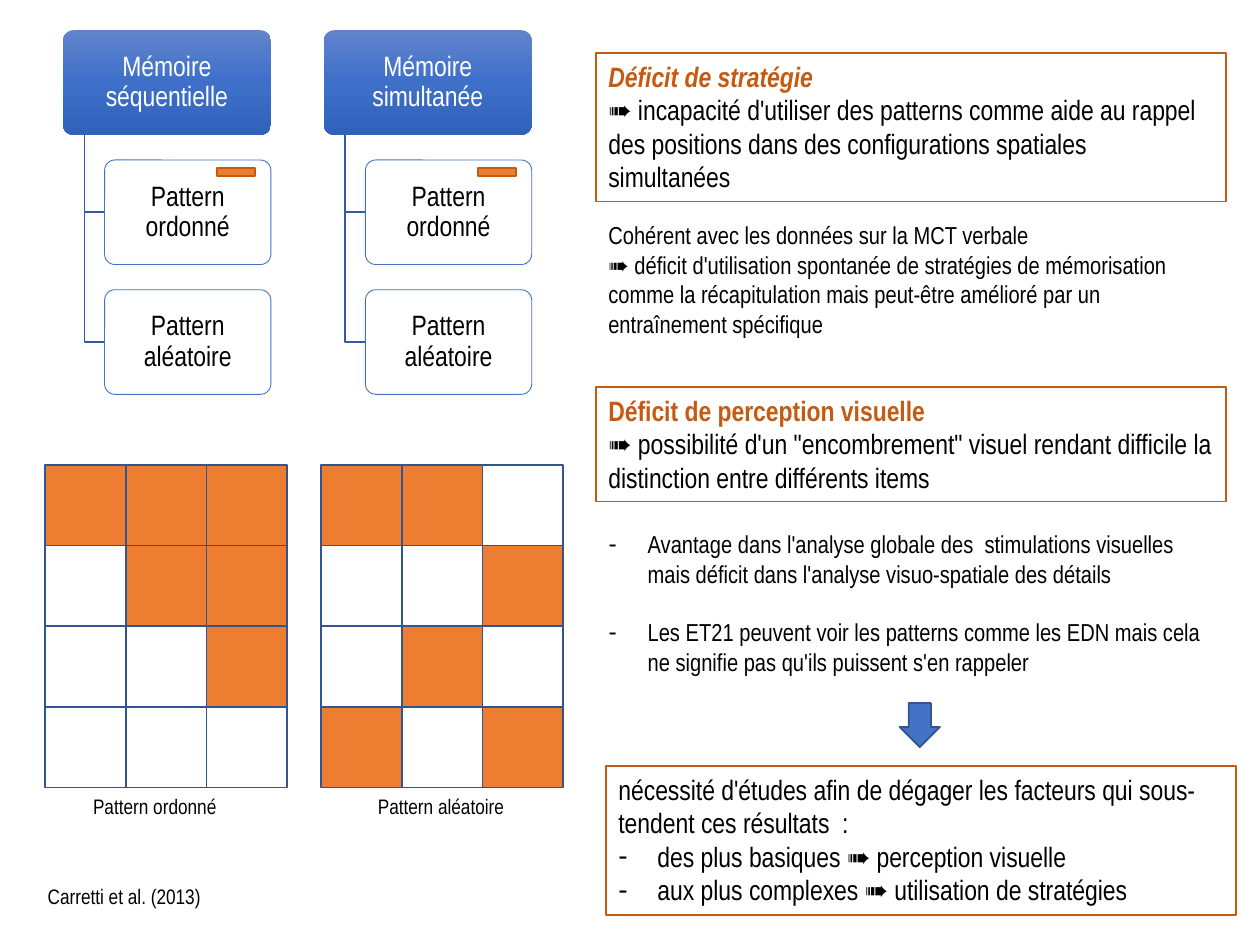
"""Builds the slide on sequential and simultaneous memory patterns."""
import copy

import lxml.etree
import pptx
import pptx.dml.color
import pptx.enum.shapes
import pptx.enum.text
import pptx.oxml.ns
import pptx.util

Inches = pptx.util.Inches
Pt = pptx.util.Pt
RGBColor = pptx.dml.color.RGBColor
SHAPE = pptx.enum.shapes.MSO_SHAPE
ALIGN = pptx.enum.text.PP_ALIGN
ANCHOR = pptx.enum.text.MSO_ANCHOR
AUTO_SIZE = pptx.enum.text.MSO_AUTO_SIZE
qn = pptx.oxml.ns.qn

FONT = "Arial Narrow"
BLACK = RGBColor(0x00, 0x00, 0x00)
WHITE = RGBColor(0xFF, 0xFF, 0xFF)
ORANGE = RGBColor(0xED, 0x7D, 0x31)
RUST = RGBColor(0xC5, 0x5A, 0x11)
BLUE = RGBColor(0x44, 0x72, 0xC4)
NAVY = RGBColor(0x32, 0x54, 0x91)
BRANCH_BLUE = RGBColor(0x36, 0x5B, 0x9D)
HEADER_GRADIENT = (
    (0, RGBColor(0x61, 0x83, 0xCB)),
    (0.5, RGBColor(0x3E, 0x70, 0xCA)),
    (1, RGBColor(0x30, 0x62, 0xBB)),
)

CELL = 0.64
NODE_HEIGHT = 0.83
NODE_STEP = 1.03
TREES = ((0.5, "Mémoire séquentielle"), (2.57, "Mémoire simultanée"))
GRIDS = (
    (0.36, ("XXX", ".XX", "..X", "...")),
    (2.55, ("XX.", "..X", ".X.", "X.X")),
)
CAPTIONS = (
    (0.64, 6.25, 1.2, "Pattern ordonné"),
    (2.9, 6.25, 1.22, "Pattern aléatoire"),
    (0.28, 6.96, 1.43, "Carretti et al. (2013)"),
)


def add_run(paragraph, text, size, color=BLACK, bold=False, italic=False):
    """Append one formatted run to a paragraph."""
    run = paragraph.add_run()
    run.text = text
    run.font.name = FONT
    run.font.size = Pt(size)
    run.font.bold = bold
    run.font.italic = italic
    run.font.color.rgb = color


def next_paragraph(frame):
    """Return the unused first paragraph of a frame or a new one."""
    first = frame.paragraphs[0]
    paragraph = frame.add_paragraph() if first.runs else first
    paragraph.alignment = ALIGN.LEFT
    paragraph.space_before = Pt(0)
    return paragraph


def add_text(frame, text, size, **style):
    """Add a left-aligned paragraph."""
    add_run(next_paragraph(frame), text, size, **style)


def add_bullet(frame, text, size, space_before=0):
    """Add a paragraph with a hanging dash."""
    paragraph = next_paragraph(frame)
    paragraph.space_before = Pt(space_before)
    add_run(paragraph, text, size)
    properties = paragraph._p.get_or_add_pPr()
    properties.set("marL", str(Inches(0.31)))
    properties.set("indent", str(Inches(-0.31)))
    lxml.etree.SubElement(properties, qn("a:buFont")).set("typeface", "Arial")
    lxml.etree.SubElement(properties, qn("a:buChar")).set("char", "-")


def add_block(slide, kind, left, top, width, height, fill=None, line=None, weight=1):
    """Add a preset shape with plain fill and outline."""
    shape = slide.shapes.add_shape(
        kind, Inches(left), Inches(top), Inches(width), Inches(height))
    shape.shadow.inherit = False
    if fill is None:
        shape.fill.background()
    else:
        shape.fill.solid()
        shape.fill.fore_color.rgb = fill
    if line is None:
        shape.line.fill.background()
    else:
        shape.line.color.rgb = line
        shape.line.width = Pt(weight)
    return shape


def add_frame(slide, left, top, width, height):
    """Add a rust-outlined box and return its text frame."""
    shape = add_block(slide, SHAPE.RECTANGLE, left, top, width, height, line=RUST)
    frame = shape.text_frame
    frame.word_wrap = True
    frame.vertical_anchor = ANCHOR.TOP
    return frame


def add_text_box(slide, left, top, width, height, wrap):
    """Add a text box and return its text frame."""
    box = slide.shapes.add_textbox(
        Inches(left), Inches(top), Inches(width), Inches(height))
    box.text_frame.word_wrap = wrap
    return box.text_frame


def add_node(slide, left, top, width, text, color, **style):
    """Add a rounded tree node with centred text."""
    shape = add_block(
        slide, SHAPE.ROUNDED_RECTANGLE, left, top, width, NODE_HEIGHT, **style)
    shape.adjustments[0] = 0.1
    frame = shape.text_frame
    frame.word_wrap = True
    frame.vertical_anchor = ANCHOR.MIDDLE
    frame.margin_left = frame.margin_right = Inches(0.06)
    frame.margin_top = frame.margin_bottom = Inches(0.05)
    paragraph = frame.paragraphs[0]
    paragraph.alignment = ALIGN.CENTER
    paragraph.line_spacing = 0.9
    add_run(paragraph, text, 16, color)
    return shape


def apply_header_gradient(shape):
    """Fill a shape with the three-stop vertical gradient."""
    shape.fill.gradient()
    shape.fill.gradient_angle = 270
    stop_list = shape._element.spPr.find(".//" + qn("a:gsLst"))
    stop_list.insert(1, copy.deepcopy(stop_list[0]))
    for stop, (position, color) in zip(shape.fill.gradient_stops, HEADER_GRADIENT):
        stop.position = position
        stop.color.rgb = color


def add_branch(slide, left, top, right, bottom):
    """Add the open elbow line from a header to a child node."""
    builder = slide.shapes.build_freeform(Inches(left), Inches(top))
    builder.add_line_segments(
        [(Inches(left), Inches(bottom)), (Inches(right), Inches(bottom))], close=False)
    shape = builder.convert_to_shape()
    shape.shadow.inherit = False
    shape.fill.background()
    shape.line.color.rgb = BRANCH_BLUE
    shape.line.width = Pt(1)


def add_tree(slide, left, heading):
    """Add a header node, its two children and the minus sign."""
    top = 0.24
    header = add_node(slide, left, top, 1.65, heading, WHITE)
    apply_header_gradient(header)
    for row, label in enumerate(("Pattern ordonné", "Pattern aléatoire"), start=1):
        child_top = top + row * NODE_STEP
        add_branch(slide, left + 0.17, top + NODE_HEIGHT,
                   left + 0.33, child_top + NODE_HEIGHT / 2)
        add_node(slide, left + 0.33, child_top, 1.32, label, BLACK,
                 fill=WHITE, line=BLUE, weight=0.5)
    add_block(slide, SHAPE.MATH_MINUS, left + 1.17, 1.23, 0.41, 0.27, ORANGE, RUST)


def add_grid(slide, left, rows):
    """Add a grid of squares, orange where the row has an X."""
    for row, marks in enumerate(rows):
        for column, mark in enumerate(marks):
            add_block(slide, SHAPE.RECTANGLE, left + column * CELL, 3.69 + row * CELL,
                      CELL, CELL, ORANGE if mark == "X" else WHITE, NAVY)


def fill_body(body):
    """Place the body placeholder and write the list of findings."""
    body.left, body.top = Inches(4.73), Inches(4.15)
    body.width, body.height = Inches(5), Inches(1.28)
    frame = body.text_frame
    frame.auto_size = AUTO_SIZE.NONE
    add_bullet(frame, "Avantage dans l'analyse globale des  stimulations visuelles mais déficit dans l'analyse visuo-spatiale des détails", 14)
    add_bullet(frame, "Les ET21 peuvent voir les patterns comme les EDN mais cela ne signifie pas qu'ils puissent s'en rappeler", 14, 16.8)


def add_conclusions(slide):
    """Add the framed interpretations and the consistency note."""
    strategy = add_frame(slide, 4.73, 0.42, 5, 1.18)
    add_text(strategy, "Déficit de stratégie", 16, color=RUST, bold=True, italic=True)
    add_text(strategy, "➠ incapacité d'utiliser des patterns comme aide au rappel des positions dans des configurations spatiales simultanées", 16)
    perception = add_frame(slide, 4.73, 3.07, 5, 0.91)
    add_text(perception, "Déficit de perception visuelle", 16, color=RUST, bold=True)
    add_text(perception, "➠ possibilité d'un \"encombrement\" visuel rendant difficile la distinction entre différents items", 16)
    note = add_text_box(slide, 4.73, 1.7, 4.83, 1.28, True)
    add_text(note, "Cohérent avec les données sur la MCT verbale", 14)
    add_text(note, "➠ déficit d'utilisation spontanée de stratégies de mémorisation comme la récapitulation mais peut-être amélioré par un entraînement spécifique", 14)
    outlook = add_frame(slide, 4.81, 6.08, 5, 1.18)
    add_text(outlook, "nécessité d'études afin de dégager les facteurs qui sous-tendent ces résultats  :", 16)
    add_bullet(outlook, "des plus basiques ➠ perception visuelle", 16)
    add_bullet(outlook, "aux plus complexes ➠ utilisation de stratégies", 16)
    arrow = add_block(slide, SHAPE.DOWN_ARROW, 7.14, 5.58, 0.32, 0.35, BLUE, NAVY)
    arrow.adjustments[0] = 0.55


def main():
    """Build and save the presentation."""
    presentation = pptx.Presentation()
    presentation.slide_width, presentation.slide_height = Inches(10), Inches(7.5)
    slide = presentation.slides.add_slide(presentation.slide_layouts[1])
    title = slide.shapes.title._element
    title.getparent().remove(title)
    fill_body(slide.placeholders[1])
    for left, rows in GRIDS:
        add_grid(slide, left, rows)
    for left, heading in TREES:
        add_tree(slide, left, heading)
    for left, top, width, text in CAPTIONS:
        add_text(add_text_box(slide, left, top, width, 0.3, False), text, 12)
    add_conclusions(slide)
    presentation.save("out.pptx")


if __name__ == "__main__":
    main()
